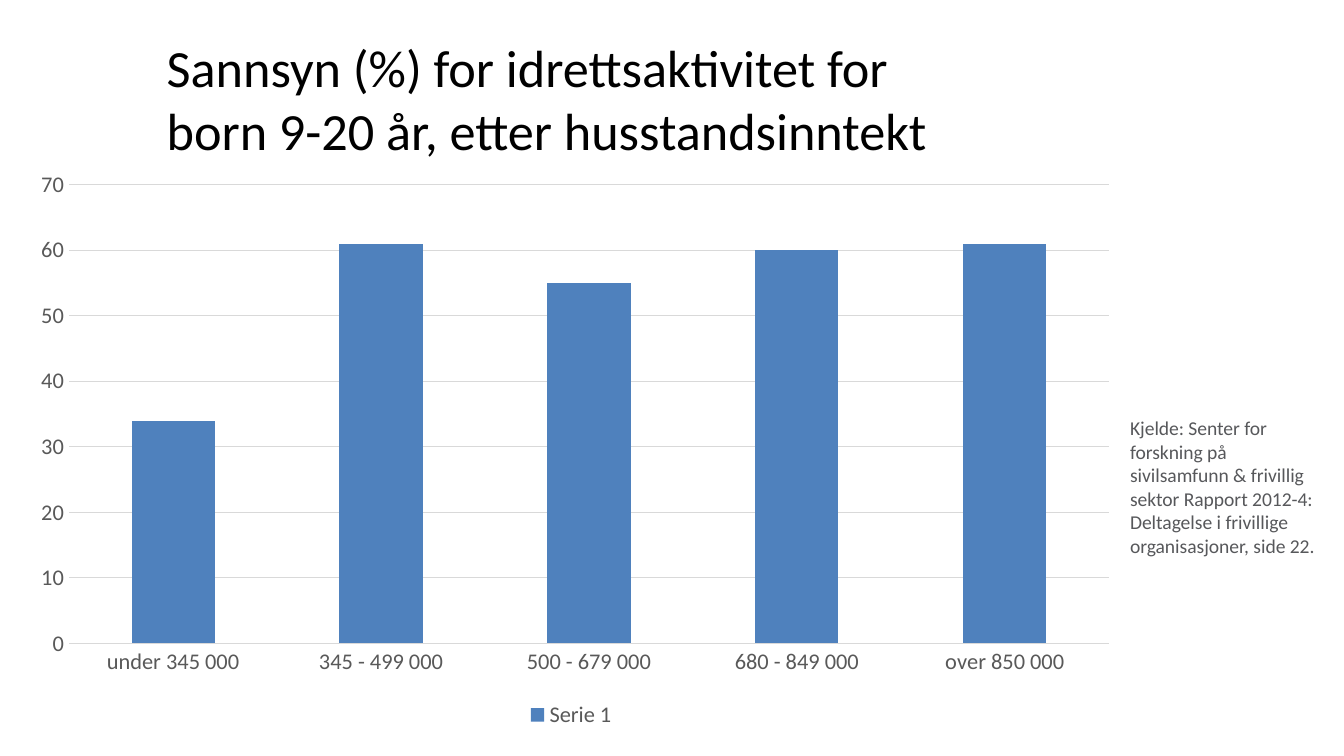
from lxml import etree
from pptx import Presentation
from pptx.chart.data import CategoryChartData
from pptx.dml.color import RGBColor
from pptx.enum.chart import XL_CHART_TYPE, XL_LEGEND_POSITION, XL_TICK_MARK
from pptx.enum.text import MSO_ANCHOR, MSO_AUTO_SIZE, PP_ALIGN
from pptx.oxml.ns import qn
from pptx.util import Inches, Pt

COLUMNS = XL_CHART_TYPE.COLUMN_CLUSTERED
BOTTOM = XL_LEGEND_POSITION.BOTTOM
NO_TICK = XL_TICK_MARK.NONE
TOP = MSO_ANCHOR.TOP
LEFT = PP_ALIGN.LEFT
FIT_SHAPE = MSO_AUTO_SIZE.SHAPE_TO_FIT_TEXT

BLACK = RGBColor(0x00, 0x00, 0x00)
BLUE = RGBColor(0x4F, 0x81, 0xBD)
LABEL_GRAY = RGBColor(0x59, 0x59, 0x59)
SOURCE_GRAY = RGBColor(0x57, 0x58, 0x5B)
GRID_GRAY = RGBColor(0xD9, 0xD9, 0xD9)
FONT = "Calibri"

WIDTH = Inches(10)
HEIGHT = WIDTH * 9 // 16
TITLE_PERCENT = (11.4, 3.75, 62.2, 21)
CHART_PERCENT = (1, 22.05, 83, 75)
SOURCE_PERCENT = (83.1, 54.2, 16.2, 20.6)
PLOT_PERCENT = {"x": 5, "y": 3.2, "w": 93.2, "h": 80.9}

TITLE = "Sannsyn (%) for idrettsaktivitet for born 9-20 år, etter husstandsinntekt"
SOURCE = ("Kjelde: Senter for forskning på sivilsamfunn & frivillig sektor "
          "Rapport 2012-4: Deltagelse i frivillige organisasjoner, side 22.")
LIKELIHOOD = {
    "under 345 000": 34,
    "345 - 499 000": 61,
    "500 - 679 000": 55,
    "680 - 849 000": 60,
    "over 850 000": 61,
}


def place(percent):
    sides = (WIDTH, HEIGHT, WIDTH, HEIGHT)
    return [round(side * share / 100) for side, share in zip(sides, percent)]


def style_font(font, size, color):
    font.name = FONT
    font.size = Pt(size)
    font.color.rgb = color


def style_line(line):
    line.color.rgb = GRID_GRAY
    line.width = Pt(0.75)


def fill_text(sp, text, size, color):
    tf = sp.text_frame
    tf.word_wrap = True
    tf.auto_size = FIT_SHAPE
    tf.vertical_anchor = TOP
    tf.text = text
    p = tf.paragraphs[0]
    p.alignment = LEFT
    style_font(p.font, size, color)


def add_title(s, box):
    sp = s.shapes.title
    sp.left, sp.top, sp.width, sp.height = box
    fill_text(sp, TITLE, 28, BLACK)


def add_source(s, box):
    fill_text(s.shapes.add_textbox(*box), SOURCE, 10.5, SOURCE_GRAY)


def set_plot_area(chart, percent):
    area = chart.plots[0]._element.getparent()
    layout = area.find(qn("c:layout"))
    if layout is None:
        layout = etree.Element(qn("c:layout"))
        area.insert(0, layout)
    manual = etree.SubElement(layout, qn("c:manualLayout"))
    settings = {"layoutTarget": "inner", "xMode": "edge", "yMode": "edge"}
    settings.update((tag, share / 100) for tag, share in percent.items())
    for tag, value in settings.items():
        etree.SubElement(manual, qn(f"c:{tag}")).set("val", str(value))


def add_likelihood_chart(s, box):
    data = CategoryChartData()
    data.categories = list(LIKELIHOOD)
    data.add_series("Serie 1", list(LIKELIHOOD.values()))
    chart = s.shapes.add_chart(COLUMNS, *box, data).chart
    style_font(chart.font, 10, BLACK)
    chart.has_title = False
    chart.has_legend = True
    chart.legend.position = BOTTOM
    chart.legend.include_in_layout = False
    style_font(chart.legend.font, 12, LABEL_GRAY)

    plot = chart.plots[0]
    plot.vary_by_categories = False
    plot.gap_width = 150
    fill = plot.series[0].format.fill
    fill.solid()
    fill.fore_color.rgb = BLUE

    for axis in (chart.category_axis, chart.value_axis):
        axis.major_tick_mark = axis.minor_tick_mark = NO_TICK
        style_font(axis.tick_labels.font, 12, LABEL_GRAY)
    style_line(chart.category_axis.format.line)
    values = chart.value_axis
    values.minimum_scale, values.maximum_scale, values.major_unit = 0, 70, 10
    values.format.line.fill.background()
    values.has_major_gridlines = True
    style_line(values.major_gridlines.format.line)
    set_plot_area(chart, PLOT_PERCENT)


def main():
    prs = Presentation()
    prs.slide_width, prs.slide_height = WIDTH, HEIGHT
    s = prs.slides.add_slide(prs.slide_layouts[5])
    add_source(s, place(SOURCE_PERCENT))
    add_likelihood_chart(s, place(CHART_PERCENT))
    add_title(s, place(TITLE_PERCENT))
    prs.save("out.pptx")


if __name__ == "__main__":
    main()
